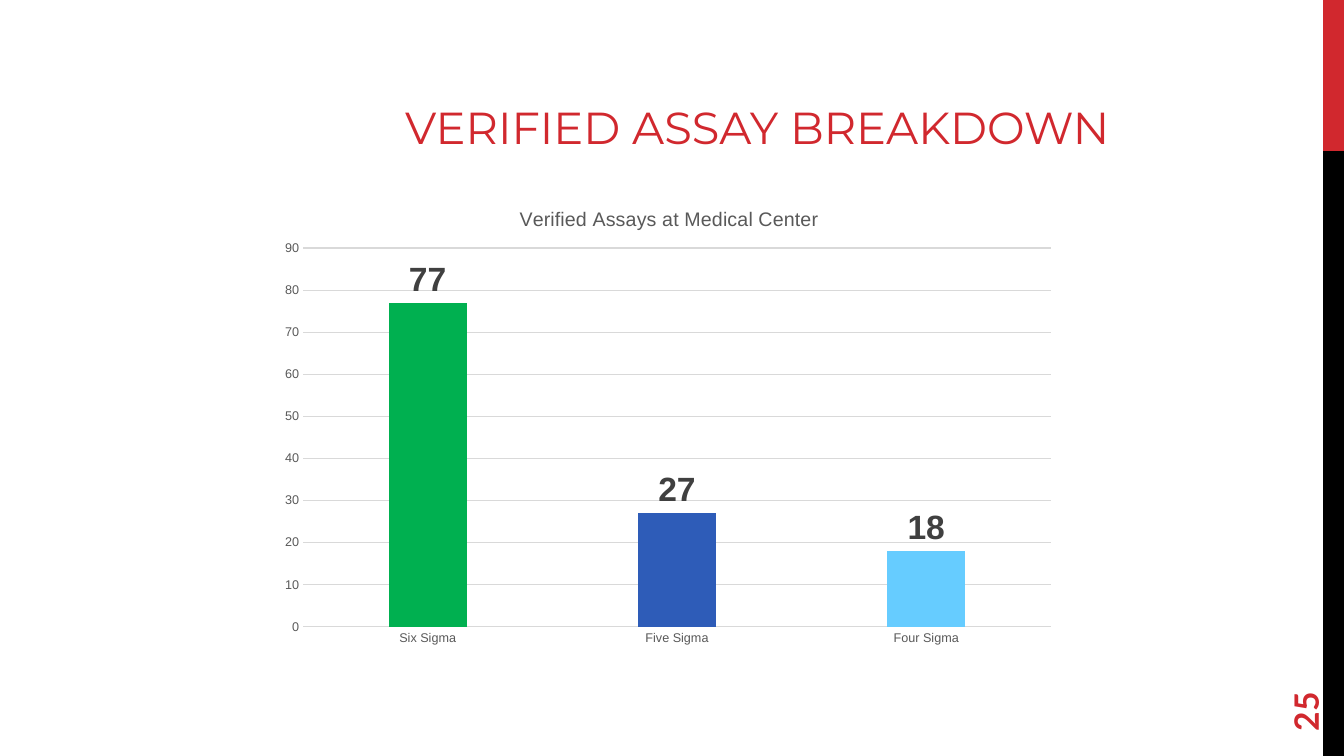
import pptx
import pptx.util
import pptx.dml.color
import pptx.chart.data
import pptx.enum.chart
import pptx.enum.shapes
import pptx.enum.text
import pptx.oxml

# Content
TITLE = "VERIFIED ASSAY BREAKDOWN"
PAGE_NUMBER = "25"
CHART_TITLE = "Verified Assays at Medical Center"
ASSAYS = [("Six Sigma", 77, "00B050"), ("Five Sigma", 27, "2E5CB8"), ("Four Sigma", 18, "66CCFF")]

# Geometry in px: left, top, width, height
SLIDE_SIZE = (1344, 756)
SIDE_BANDS = [((1323, 0, 21, 151), "D1282E"), ((1323, 151, 21, 605), "000000")]
TITLE_BOX = (395, 8, 781, 151)
NUMBER_BOX = (1233, 642, 145, 53)
CHART_BOX = (269, 185, 797, 471)
PLOT_BOX = (303, 248, 748, 379)
CHART_TITLE_AT = (516, 203)

RED, GRAY, DARK_GRAY, GRID = "D1282E", "595959", "404040", "D9D9D9"
EMU_PER_PX = 914400 / 100.8


def px(*lengths):
    return [pptx.util.Emu(round(length * EMU_PER_PX)) for length in lengths]


def color(hex_value):
    return pptx.dml.color.RGBColor.from_string(hex_value)


def style_font(font, size, hex_value, name="Arial", bold=False):
    font.size = pptx.util.Pt(size)
    font.name = name
    font.bold = bold
    font.color.rgb = color(hex_value)


def write(shape, text, anchor, **font_format):
    frame = shape.text_frame
    frame.word_wrap = True
    frame.auto_size = pptx.enum.text.MSO_AUTO_SIZE.NONE
    frame.vertical_anchor = anchor
    paragraph = frame.paragraphs[0]
    paragraph.alignment = pptx.enum.text.PP_ALIGN.LEFT
    run = paragraph.add_run()
    run.text = text
    style_font(run.font, **font_format)


def style_line(line, hex_value):
    line.width = pptx.util.Pt(0.75)
    line.color.rgb = color(hex_value)


def chart_layout(x, y, size=None):
    left, top, width, height = CHART_BOX
    values = {"x": (x - left) / width, "y": (y - top) / height}
    target = ""
    if size:
        target = '<c:layoutTarget val="inner"/>'
        values.update(w=size[0] / width, h=size[1] / height)
    modes = "".join(f'<c:{key}Mode val="edge"/>' for key in "xy")
    numbers = "".join(f'<c:{key} val="{value:.4f}"/>' for key, value in values.items())
    namespace = "http://schemas.openxmlformats.org/drawingml/2006/chart"
    return pptx.oxml.parse_xml(
        f'<c:layout xmlns:c="{namespace}"><c:manualLayout>'
        f"{target}{modes}{numbers}</c:manualLayout></c:layout>")


def set_layout(parent, layout, position):
    for child in list(parent):
        if child.tag == layout.tag:
            parent.remove(child)
    parent.insert(position, layout)


presentation = pptx.Presentation()
presentation.slide_width, presentation.slide_height = px(*SLIDE_SIZE)
slide = presentation.slides.add_slide(presentation.slide_layouts[5])

# Side bands
for box, fill in SIDE_BANDS:
    band = slide.shapes.add_shape(pptx.enum.shapes.MSO_SHAPE.RECTANGLE, *px(*box))
    band.shadow.inherit = False
    band.fill.solid()
    band.fill.fore_color.rgb = color(fill)
    band.line.fill.background()

# Title and page number
title = slide.shapes.title
title.left, title.top, title.width, title.height = px(*TITLE_BOX)
write(title, TITLE, pptx.enum.text.MSO_ANCHOR.BOTTOM, size=32, hex_value=RED, name="Montserrat")
number = slide.shapes.add_textbox(*px(*NUMBER_BOX))
number.rotation = 270
write(number, PAGE_NUMBER, pptx.enum.text.MSO_ANCHOR.MIDDLE,
      size=24, hex_value=RED, name="Lato", bold=True)

# Chart
names, counts, fills = zip(*ASSAYS)
chart_data = pptx.chart.data.CategoryChartData()
chart_data.categories = names
chart_data.add_series("Series 1", counts)
chart = slide.shapes.add_chart(
    pptx.enum.chart.XL_CHART_TYPE.COLUMN_CLUSTERED, *px(*CHART_BOX), chart_data).chart
style_font(chart.font, 10, "000000")
chart.has_legend = False
chart.has_title = True
heading = chart.chart_title.text_frame.paragraphs[0].add_run()
heading.text = CHART_TITLE
style_font(heading.font, 14, GRAY)
chart.chart_title.include_in_layout = False
set_layout(chart.chart_title._element, chart_layout(*CHART_TITLE_AT), 1)

# Columns and value labels
plot = chart.plots[0]
plot.gap_width, plot.overlap, plot.vary_by_categories = 219, -27, False
set_layout(plot._element.getparent(), chart_layout(*PLOT_BOX[:2], PLOT_BOX[2:]), 0)
series = plot.series[0]
for index, fill in enumerate(fills):
    point_fill = series.points[index].format.fill
    point_fill.solid()
    point_fill.fore_color.rgb = color(fill)
labels = series.data_labels
labels.show_value = True
labels.position = pptx.enum.chart.XL_LABEL_POSITION.OUTSIDE_END
style_font(labels.font, 24, DARK_GRAY, bold=True)

# Axes
for axis in (chart.category_axis, chart.value_axis):
    axis.major_tick_mark = axis.minor_tick_mark = pptx.enum.chart.XL_TICK_MARK.NONE
    style_font(axis.tick_labels.font, 9, GRAY)
style_line(chart.category_axis.format.line, GRID)
value_axis = chart.value_axis
value_axis.minimum_scale, value_axis.maximum_scale, value_axis.major_unit = 0, 90, 10
value_axis.format.line.fill.background()
style_line(value_axis.major_gridlines.format.line, GRID)

presentation.save("out.pptx")
